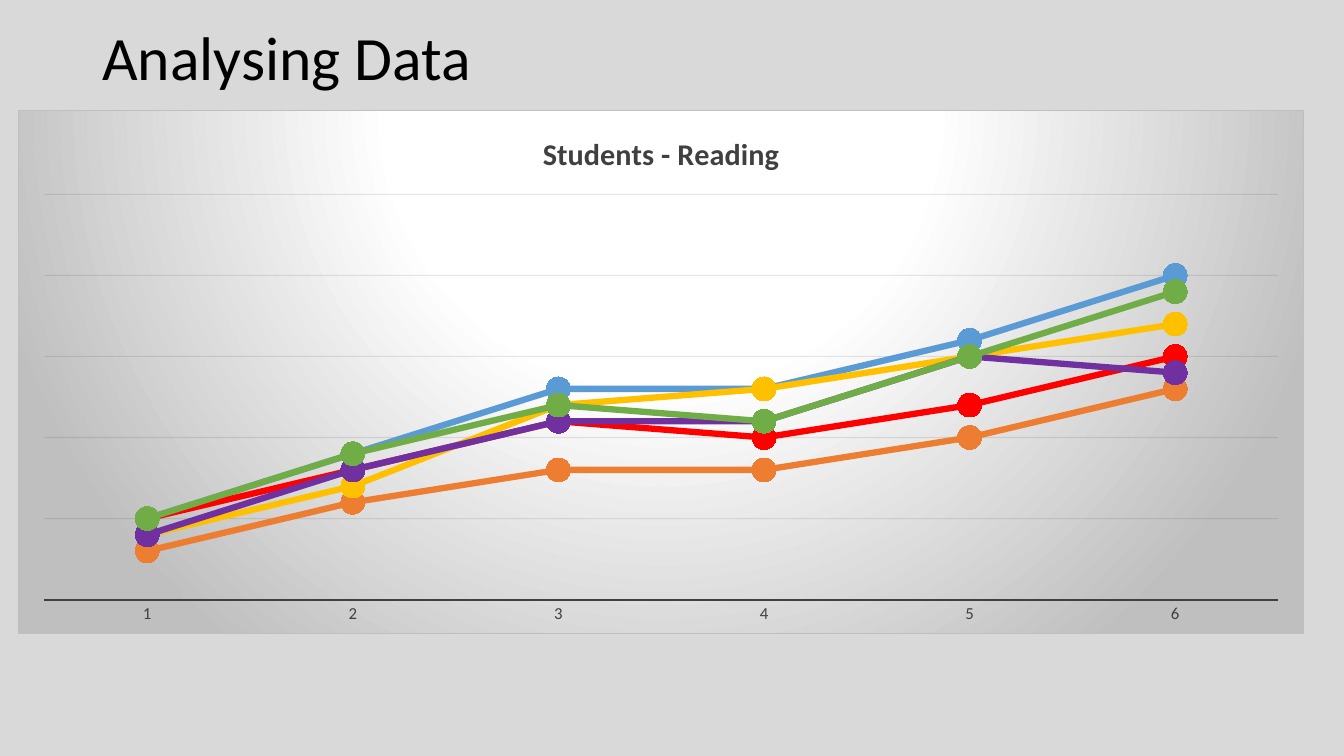
from dataclasses import dataclass

from lxml import etree
from pptx import Presentation
from pptx import util as u
from pptx.chart.data import CategoryChartData
from pptx.dml.color import RGBColor
from pptx.enum import chart as ch, text
from pptx.oxml import parse_xml
from pptx.oxml.ns import nsdecls, qn


@dataclass(frozen=True)
class Theme:
    """Colours, font and type sizes of the slide."""
    font: str = "Calibri"
    back: str = "D9D9D9"
    ink: str = "000000"
    grey: str = "404040"
    grid: str = "0D0D0D"
    border: str = "BFBFBF"
    light: str = "FFFFFF"
    title: float = 44
    heading: float = 21.6
    label: float = 12


T = Theme()
CATEGORIES = ["1", "2", "3", "4", "5", "6"]
STUDENTS = [
    ("Series 1", "5B9BD5", (25, 45, 65, 65, 80, 100)),
    ("Series 2", "ED7D31", (15, 30, 40, 40, 50, 65)),
    ("Series 3", "FF0000", (25, 40, 55, 50, 60, 75)),
    ("Series 4", "FFC000", (20, 35, 60, 65, 75, 85)),
    ("Series 5", "7030A0", (20, 40, 55, 55, 75, 70)),
    ("Series 6", "70AD47", (25, 45, 60, 55, 75, 95)),
]


def rgb(value):
    """Turn a hex string into a colour."""
    return RGBColor.from_string(value)


def apply(obj, **values):
    """Set each given attribute on an object."""
    for name, value in values.items():
        setattr(obj, name, value)


def style_font(font, size, color, bold=False):
    """Give a font the theme face with a size, colour and weight."""
    apply(font, name=T.font, size=u.Pt(size), bold=bold)
    font.color.rgb = rgb(color)


def style_line(line, color, width):
    """Give a line a solid colour and a width in points."""
    line.color.rgb = rgb(color)
    line.width = u.Pt(width)


def add_title(slide, words):
    """Add the slide title."""
    tf = slide.shapes.add_textbox(u.Cm(2.33), u.Cm(0.3), u.Cm(29.21), u.Cm(2.46)).text_frame
    apply(tf, word_wrap=True, vertical_anchor=text.MSO_ANCHOR.MIDDLE)
    p = tf.paragraphs[0]
    p.line_spacing = 0.9
    r = p.add_run()
    r.text = words
    style_font(r.font, T.title, T.ink)


def fill_chart(chart):
    """Put a radial gradient and a thin border behind the chart."""
    stops = "".join(
        f'<a:gs pos="{pos * 1000}"><a:srgbClr val="{color}"/></a:gs>'
        for pos, color in ((0, T.light), (39, T.light), (100, T.border)))
    chart._chartSpace.chart.addnext(parse_xml(
        f'<c:spPr {nsdecls("c", "a")}><a:gradFill><a:gsLst>{stops}</a:gsLst>'
        '<a:path path="circle"><a:fillToRect l="50000" t="-80000" r="50000" b="180000"/></a:path>'
        f'</a:gradFill><a:ln w="{u.Pt(0.75)}"><a:solidFill><a:srgbClr val="{T.border}"/>'
        '</a:solidFill></a:ln></c:spPr>'))


def place_plot(chart, x, y, w, h):
    """Fix the inner plot area as fractions of the chart."""
    area = chart._chartSpace.chart.plotArea
    for old in area.findall(qn("c:layout")):
        area.remove(old)
    sizes = "".join(f'<c:{k} val="{v}"/>' for k, v in zip("xywh", (x, y, w, h)))
    area.insert(0, parse_xml(
        f'<c:layout {nsdecls("c")}><c:manualLayout><c:layoutTarget val="inner"/>'
        f'<c:xMode val="edge"/><c:yMode val="edge"/>{sizes}</c:manualLayout></c:layout>'))


def style_axes(chart):
    """Show the category axis and only faint gridlines for values."""
    cat, val = chart.category_axis, chart.value_axis
    apply(cat, major_tick_mark=ch.XL_TICK_MARK.NONE, has_major_gridlines=False)
    style_line(cat.format.line, T.grey, 1.5)
    style_font(cat.tick_labels.font, T.label, T.grey)
    apply(val, minimum_scale=0, maximum_scale=125, major_unit=25,
          has_major_gridlines=True, visible=False)
    grid = val.major_gridlines.format.line
    style_line(grid, T.grid, 0.75)
    for color in val.major_gridlines._xAx.find(qn("c:majorGridlines")).iter(qn("a:srgbClr")):
        etree.SubElement(color, qn("a:alpha")).set("val", "10000")


def style_series(series, color):
    """Draw a series as a thick line with round markers."""
    series.smooth = False
    style_line(series.format.line, color, 4.5)
    apply(series.marker, style=ch.XL_MARKER_STYLE.CIRCLE, size=17)
    series.marker.format.fill.solid()
    series.marker.format.fill.fore_color.rgb = rgb(color)
    series.marker.format.line.fill.background()


def add_line_chart(slide, heading):
    """Add the reading chart with one line per student."""
    data = CategoryChartData()
    data.categories = CATEGORIES
    for name, _, values in STUDENTS:
        data.add_series(name, values)
    chart = slide.shapes.add_chart(
        ch.XL_CHART_TYPE.LINE_MARKERS, u.Cm(0.46), u.Cm(2.78), u.Cm(32.41), u.Cm(13.2), data).chart
    apply(chart, has_legend=False, has_title=True)
    style_font(chart.font, T.label, T.ink)
    p = chart.chart_title.text_frame.paragraphs[0]
    r = p.add_run()
    r.text = heading
    style_font(r.font, T.heading, T.grey, bold=True)
    chart.chart_title.include_in_layout = False
    chart.plots[0].vary_by_categories = False
    for series, (_, color, _) in zip(chart.plots[0].series, STUDENTS):
        style_series(series, color)
    style_axes(chart)
    place_plot(chart, 0.02, 0.16, 0.96, 0.775)
    fill_chart(chart)


def main():
    """Build and save the slide."""
    prs = Presentation()
    apply(prs, slide_width=u.Cm(33.87), slide_height=u.Cm(19.05))
    slide = prs.slides.add_slide(prs.slide_layouts[6])
    slide.background.fill.solid()
    slide.background.fill.fore_color.rgb = rgb(T.back)
    add_title(slide, "Analysing Data")
    add_line_chart(slide, "Students - Reading")
    prs.save("out.pptx")


if __name__ == "__main__":
    main()
